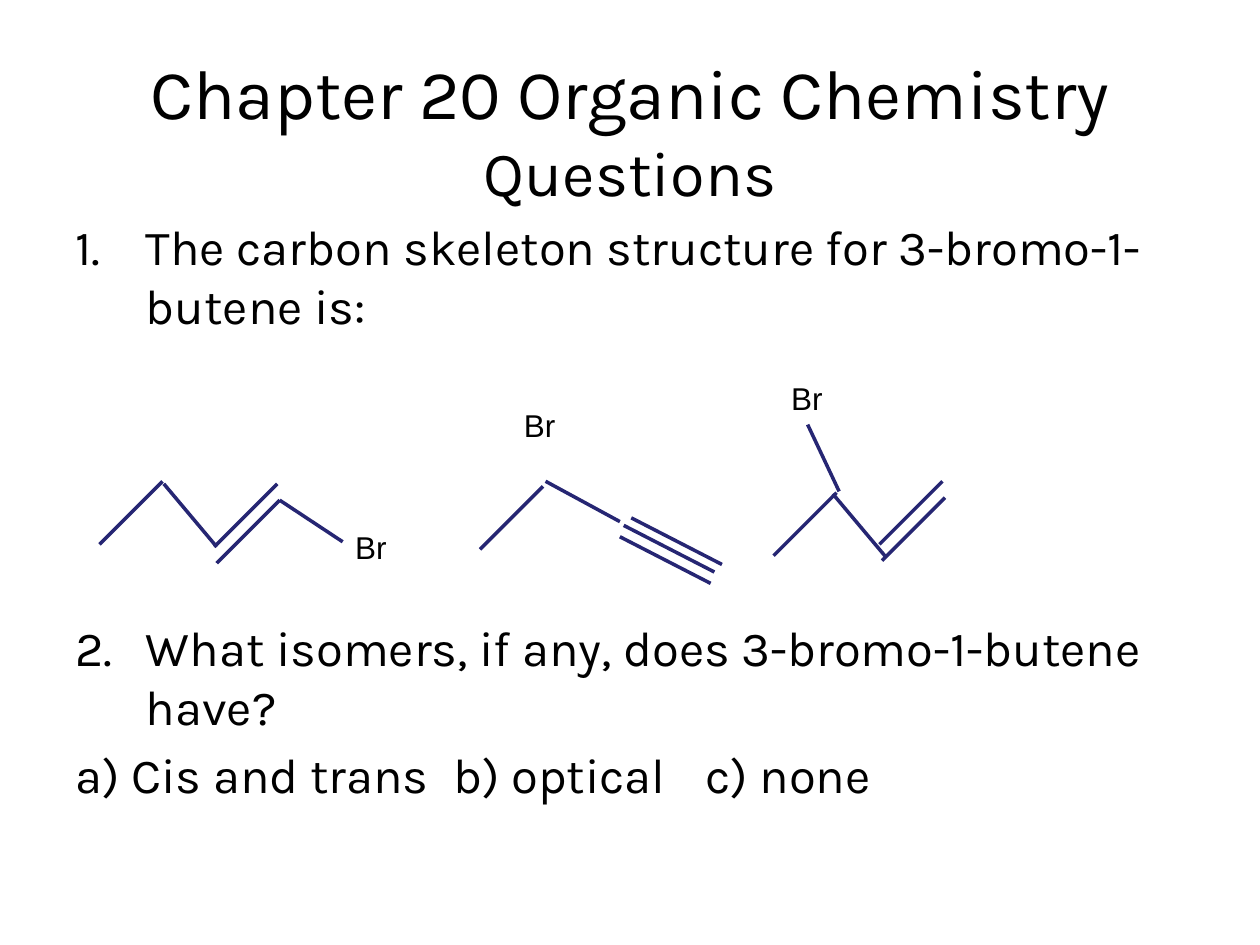
from lxml.etree import SubElement as Sub
from pptx import Presentation
from pptx.dml.color import RGBColor as RGB
from pptx.enum.shapes import MSO_CONNECTOR as LINE
from pptx.enum.text import MSO_ANCHOR as ANCHOR, PP_ALIGN as ALIGN
from pptx.oxml.ns import qn
from pptx.util import Inches as In, Pt

INK = RGB(0x00, 0x00, 0x00)
NAVY = RGB(0x26, 0x26, 0x73)
WIDE, HIGH = In(10), In(7.5)
EDGE = 0.05 * WIDE
HANG = In(0.56)
GAP, ROOM = 5, 162  # points above a paragraph, and above the one below the drawings

# Bond directions in inches
RISE, FALL, SLOPE = (0.5, -0.5), (0.42, 0.5), (0.72, 0.37)

# Each molecule: bonds as (start x, start y, direction), then the place of its Br
MOLS = [
    ([(0.79, 4.32, RISE), (1.3, 3.84, FALL), (1.7, 4.34, RISE),
      (1.72, 4.47, RISE), (2.22, 3.97, (0.5, 0.33))], (2.72, 4.14)),
    ([(3.81, 4.36, RISE), (4.33, 3.82, (0.59, 0.32)), (4.95, 4.17, SLOPE),
      (5.01, 4.11, SLOPE), (4.92, 4.26, SLOPE)], (4.06, 3.17)),
    ([(6.14, 4.41, RISE), (6.61, 3.92, FALL), (6.98, 4.32, RISE),
      (7, 4.45, RISE), (6.41, 3.37, (0.25, 0.53))], (6.18, 2.96)),
]

# Text, list number, space above
LINES = [
    ("The carbon skeleton structure for 3-bromo-1-butene is:", 1, GAP),
    ("What isomers, if any, does 3-bromo-1-butene have?", 2, ROOM),
    ("a) Cis and trans\tb) optical\tc) none", None, GAP),
]


def style(run, size, face="Karla"):
    run.font.size, run.font.name = Pt(size), face
    run.font.color.rgb = INK


def number(para, start):
    props = para._p.get_or_add_pPr()
    props.set("marL", str(HANG))
    props.set("indent", str(-HANG))
    Sub(props, qn("a:buFont"), typeface="+mj-lt")
    Sub(props, qn("a:buAutoNum"), type="arabicPeriod", startAt=str(start))


def add_title(slide):
    title = slide.shapes.title
    title.left, title.top = int(EDGE), int(0.04 * HIGH)
    title.width, title.height = int(0.9 * WIDE), In(1.45)
    frame = title.text_frame
    frame.vertical_anchor = ANCHOR.MIDDLE
    para = frame.paragraphs[0]
    para.text = "Chapter 20 Organic Chemistry\vQuestions"
    para.alignment = ALIGN.CENTER
    for run, size in zip(para.runs, (40, 36)):
        style(run, size)


def add_body(slide):
    box = slide.shapes.add_textbox(int(EDGE), In(1.67), In(8.92), In(3.5))
    frame = box.text_frame
    frame.word_wrap = True
    for i, (text, start, above) in enumerate(LINES):
        para = frame.add_paragraph() if i else frame.paragraphs[0]
        para.text = text
        para.space_before = Pt(above)
        if start:
            number(para, start)
        style(para.runs[0], 28)


def add_bond(slide, x, y, way):
    ends = (x, y, x + way[0], y + way[1])
    bond = slide.shapes.add_connector(LINE.STRAIGHT, *map(In, ends))
    bond.line.color.rgb, bond.line.width = NAVY, Pt(2)
    Sub(bond._element.spPr, qn("a:effectLst"))


def add_atom(slide, x, y):
    box = slide.shapes.add_textbox(In(x), In(y), In(0.61), In(0.4))
    frame = box.text_frame
    frame.word_wrap = True
    frame.text = "Br"
    style(frame.paragraphs[0].runs[0], 18, "Arial")


def main():
    deck = Presentation()
    deck.slide_width, deck.slide_height = WIDE, HIGH
    slide = deck.slides.add_slide(deck.slide_layouts[5])
    add_title(slide)
    add_body(slide)
    # Answer choices drawn as skeleton structures
    for bonds, place in MOLS:
        for bond in bonds:
            add_bond(slide, *bond)
        add_atom(slide, *place)
    deck.save("out.pptx")


if __name__ == "__main__":
    main()
